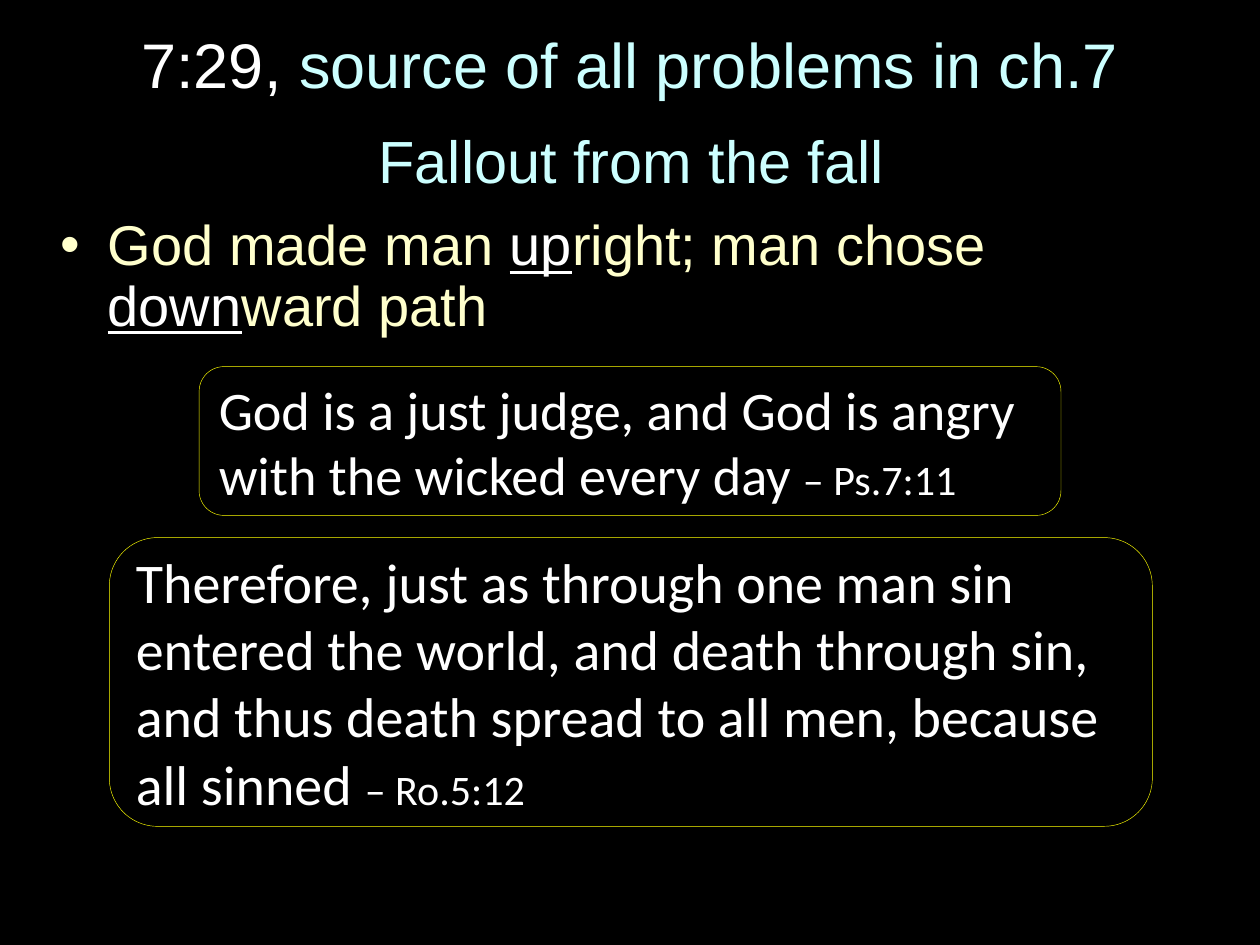
"""Build a slide with a title, a bulleted body and two quoted verses."""
from lxml import etree
from pptx import Presentation
from pptx.dml.color import RGBColor
from pptx.enum.shapes import MSO_SHAPE
from pptx.enum.text import MSO_ANCHOR, MSO_AUTO_SIZE, PP_ALIGN
from pptx.oxml.ns import qn
from pptx.util import Pt

ROUNDED = MSO_SHAPE.ROUNDED_RECTANGLE
MIDDLE = MSO_ANCHOR.MIDDLE
NO_FIT = MSO_AUTO_SIZE.NONE
CENTER, LEFT = PP_ALIGN.CENTER, PP_ALIGN.LEFT
BLACK, WHITE, YELLOW = "000000", "FFFFFF", "FFFF00"
CYAN, CREAM = "CCFFFF", "FFFFCC"


def color(value):
    return RGBColor.from_string(value)


def add_text(para, text, size, fill=WHITE, font="Arial", underline=False):
    span = para.add_run()
    span.text = text
    span.font.size = Pt(size)
    span.font.name = font
    span.font.color.rgb = color(fill)
    span.font.underline = underline


deck = Presentation()
deck.slide_width, deck.slide_height = Pt(720), Pt(540)
page = deck.slides.add_slide(deck.slide_layouts[1])
page.background.fill.solid()
page.background.fill.fore_color.rgb = color(BLACK)

title, body = page.placeholders
title.left, title.top, title.width, title.height = Pt(36), Pt(6), Pt(648), Pt(60)
body.left, body.top, body.width, body.height = Pt(27.3), Pt(72), Pt(667), Pt(437)
for holder in (title, body):
    holder.text_frame.auto_size = NO_FIT
    holder.text_frame.word_wrap = True

title.text_frame.vertical_anchor = MIDDLE
heading = title.text_frame.paragraphs[0]
heading.alignment = CENTER
add_text(heading, "7:29, ", 36)
add_text(heading, "source of all problems in ch.7", 36, fill=CYAN)

body.text_frame.margin_top = Pt(3.6)
subheading = body.text_frame.paragraphs[0]
point = body.text_frame.add_paragraph()
for para, indent, bullet, before, after, align in (
    (subheading, 0, None, 0, 6, CENTER),
    (point, 27, "•", 6, 0, LEFT),
):
    properties = para._p.get_or_add_pPr()
    properties.set("marL", str(Pt(indent)))
    properties.set("indent", str(-Pt(indent)))
    if bullet:
        etree.SubElement(properties, qn("a:buChar")).set("char", bullet)
    else:
        etree.SubElement(properties, qn("a:buNone"))
    para.alignment = align
    para.line_spacing = 0.9
    para.space_before, para.space_after = Pt(before), Pt(after)

add_text(subheading, "Fallout from the fall", 34, fill=CYAN)
for text, stressed in (
    ("God made man ", False),
    ("up", True),
    ("right; man chose ", False),
    ("down", True),
    ("ward path", False),
):
    add_text(point, text, 32, fill=WHITE if stressed else CREAM, underline=stressed)

verses = (
    (113.8, 209.5, 492.5, 85, 31,
     "God is a just judge, and God is angry with the wicked every day ",
     "– Ps.7:11"),
    (62.5, 307.2, 596, 165, 32,
     "Therefore, just as through one man sin entered the world, and death "
     "through sin, and thus death spread to all men, because all sinned ",
     "– Ro.5:12"),
)
for left, top, width, height, size, verse, reference in verses:
    box = page.shapes.add_shape(ROUNDED, Pt(left), Pt(top), Pt(width), Pt(height))
    box.shadow.inherit = False
    box.fill.solid()
    box.fill.fore_color.rgb = color(BLACK)
    box.line.color.rgb = color(YELLOW)
    box.line.width = Pt(0.25)
    box.text_frame.word_wrap = True
    box.text_frame.vertical_anchor = MIDDLE
    para = box.text_frame.paragraphs[0]
    para.alignment = LEFT
    add_text(para, verse, size, font="Calibri")
    add_text(para, reference, 24, font="Calibri")

deck.save("out.pptx")
